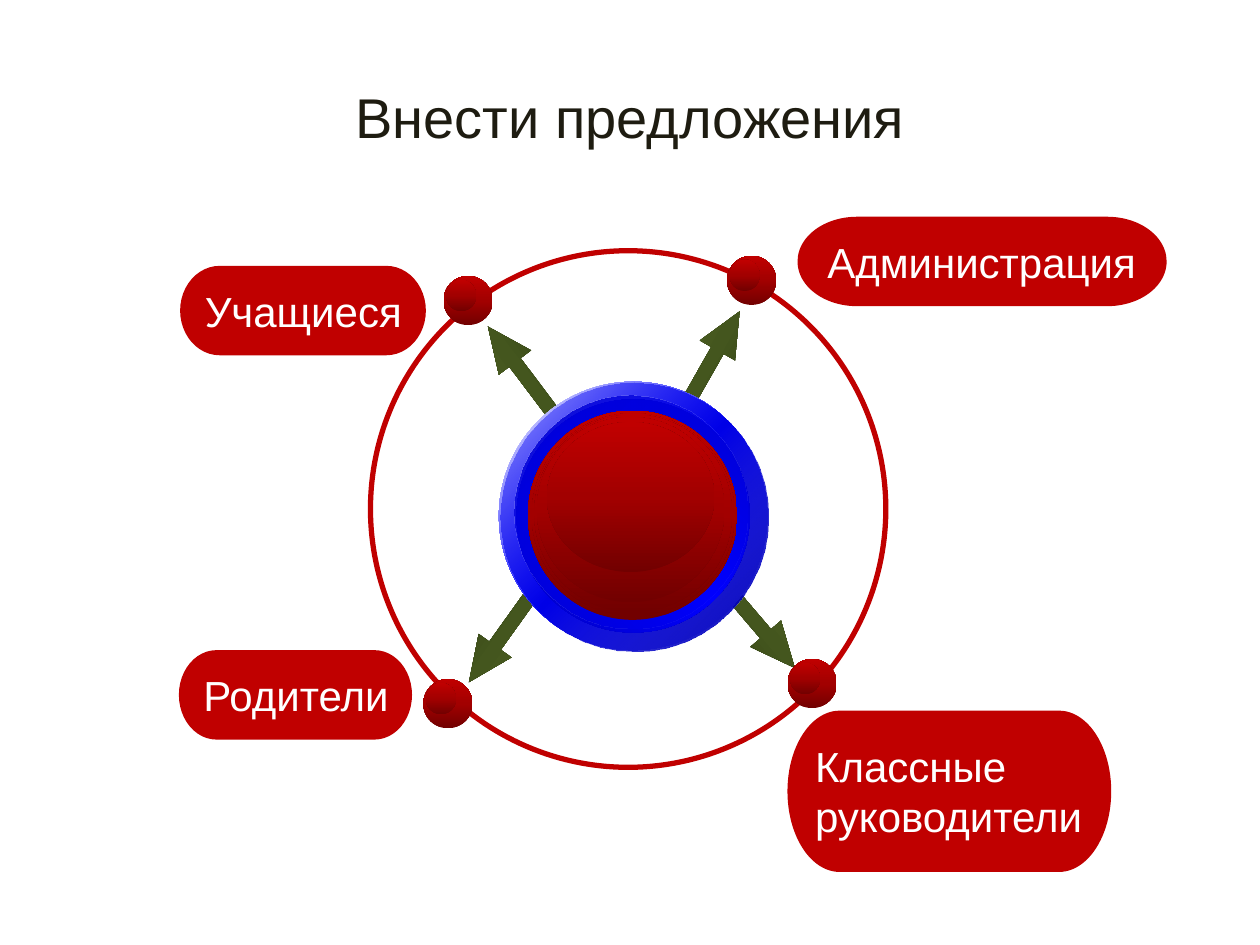
import pptx
import pptx.dml.color
import pptx.enum.shapes
import pptx.enum.text
import pptx.oxml
import pptx.oxml.ns
import pptx.util

Inches = pptx.util.Inches
Pt = pptx.util.Pt
Kind = pptx.enum.shapes.MSO_SHAPE
Align = pptx.enum.text.PP_ALIGN
Anchor = pptx.enum.text.MSO_ANCHOR

HUES = {"red": "C00000", "white": "FFFFFF", "title": "1E1C11"}

# Gradient stops: position, colour, opacity (all in percent except colour).
GREEN = [(0, "303D15", 100), (50, "44561E", 100), (100, "516624", 100)]
RED = [(0, "720000", 100), (50, "A20000", 100), (100, "C00000", 100)]
RINGS = [
    (3.96, 3.03, 2.13, 45,
     [(0, "FFFFFF", 100), (50, "0000FF", 100), (100, "FFFFFF", 100)]),
    (3.97, 3.04, 2.13, 45, [(0, "0000FF", 32), (100, "0000B6", 100)]),
    (4.1, 3.17, 1.85, 315,
     [(0, "0000C3", 100), (50, "0000FF", 100), (100, "0000C3", 100)]),
    (4.08, 3.14, 1.85, 45, [(0, "0000D1", 100), (100, "0000FF", 0)]),
]
CORE = [
    (4.19, 3.26, 1.66, 1.66),
    (4.22, 3.28, 1.61, 1.61),
    (4.24, 3.29, 1.57, 1.57),
    (4.26, 3.31, 1.49, 1.47),
    (4.34, 3.35, 1.33, 1.19),
]
ARROWS = [(5.22, 2.69, 299.6), (5.59, 4.81, 49.5),
          (3.7, 2.78, 233), (3.54, 4.9, 125.6)]
BALLS = [(3.52, 2.19), (3.36, 5.39), (5.77, 2.03), (6.25, 5.23)]
LABELS = [
    (6.33, 1.72, 2.93, 0.71, Align.LEFT, ["Администрация"]),
    (1.43, 2.11, 1.95, 0.71, Align.RIGHT, ["Учащиеся"]),
    (6.25, 5.64, 2.57, 1.28, Align.LEFT, ["Классные", "руководители"]),
    (1.42, 5.16, 1.85, 0.71, Align.RIGHT, ["Родители"]),
]


def rgb(name):
    return pptx.dml.color.RGBColor.from_string(HUES[name])


def add_form(shapes, kind, x, y, w, h):
    """Add a preset shape with no fill, line or shadow."""
    form = shapes.add_shape(kind, Inches(x), Inches(y), Inches(w), Inches(h))
    form.shadow.inherit = False
    form.fill.background()
    form.line.fill.background()
    return form


def shade(form, stops, angle):
    """Swap the empty fill for a linear gradient, clockwise angle in degrees."""
    marks = "".join(
        f'<a:gs pos="{pos * 1000}"><a:srgbClr val="{hue}">'
        f'<a:alpha val="{alpha * 1000}"/></a:srgbClr></a:gs>'
        for pos, hue, alpha in stops)
    grad = pptx.oxml.parse_xml(
        f'<a:gradFill {pptx.oxml.ns.nsdecls("a")} rotWithShape="1">'
        f'<a:gsLst>{marks}</a:gsLst>'
        f'<a:lin ang="{angle * 60000}" scaled="1"/></a:gradFill>')
    props = form._element.spPr
    props.replace(props.find(pptx.oxml.ns.qn("a:noFill")), grad)


def add_disc(shapes, x, y, w, h, stops=RED, angle=270):
    shade(add_form(shapes, Kind.OVAL, x, y, w, h), stops, angle)


def add_arrow(shapes, x, y, turn):
    arrow = add_form(shapes, Kind.RIGHT_ARROW, x, y, 0.87, 0.32)
    arrow.adjustments[0] = 0.352
    arrow.adjustments[1] = 1.11
    arrow.rotation = turn
    shade(arrow, GREEN, 270)


def add_orbit(shapes):
    orbit = add_form(shapes, Kind.OVAL, 2.94, 1.99, 4.09, 4.1)
    orbit.line.color.rgb = rgb("red")
    orbit.line.width = Pt(3)


def add_ball(shapes, x, y):
    group = shapes.add_group_shape()
    add_disc(group.shapes, x, y, 0.39, 0.39)
    add_disc(group.shapes, x + 0.02, y + 0.03, 0.24, 0.25)


def add_hub(shapes):
    for x, y, size, angle, stops in RINGS:
        add_disc(shapes, x, y, size, size, stops, angle)
    group = shapes.add_group_shape()
    for box in CORE:
        add_disc(group.shapes, *box)


def add_text(para, text, size, hue, align):
    para.alignment = align
    run = para.add_run()
    run.text = text
    run.font.name = "Arial"
    run.font.size = Pt(size)
    run.font.color.rgb = rgb(hue)


def add_label(shapes, x, y, w, h, align, lines):
    label = add_form(shapes, Kind.FLOWCHART_TERMINATOR, x, y, w, h)
    label.fill.solid()
    label.fill.fore_color.rgb = rgb("red")
    frame = label.text_frame
    frame.word_wrap = False
    frame.auto_size = pptx.enum.text.MSO_AUTO_SIZE.SHAPE_TO_FIT_TEXT
    frame.vertical_anchor = Anchor.TOP
    for i, line in enumerate(lines):
        para = frame.add_paragraph() if i else frame.paragraphs[0]
        add_text(para, line, 24, "white", align)


def set_title(title, text):
    title.left, title.top = Inches(0.5), Inches(0.3)
    title.width, title.height = Inches(9), Inches(1.25)
    title.text_frame.vertical_anchor = Anchor.MIDDLE
    add_text(title.text_frame.paragraphs[0], text, 32, "title", Align.CENTER)


def main():
    deck = pptx.Presentation()
    deck.slide_width, deck.slide_height = Inches(10), Inches(7.5)
    slide = deck.slides.add_slide(deck.slide_layouts[5])
    shapes = slide.shapes
    set_title(shapes.title, "Внести предложения")
    for arrow in ARROWS:
        add_arrow(shapes, *arrow)
    add_orbit(shapes)
    for ball in BALLS:
        add_ball(shapes, *ball)
    add_hub(shapes)
    for label in LABELS:
        add_label(shapes, *label)
    deck.save("out.pptx")


if __name__ == "__main__":
    main()
